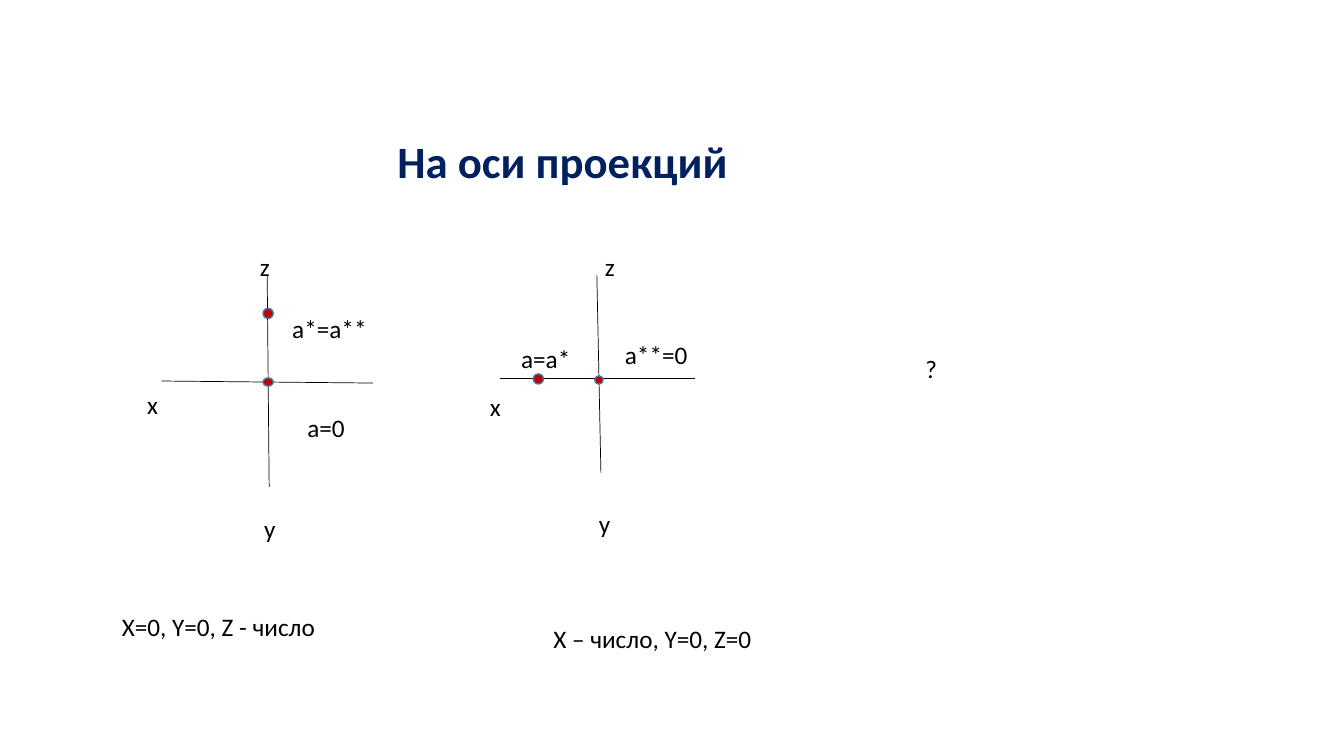
"""Builds a slide about points that lie on the projection axes."""
from pptx import Presentation, util as u
from pptx.dml.color import RGBColor
from pptx.enum import shapes, text
from pptx.oxml.ns import qn
from lxml import etree

COLORS = {"title": "002060", "ink": "000000", "point": "C00000", "rim": "43739E"}


def color(name):
    return RGBColor.from_string(COLORS[name])


def write(sp, txt, size=18, ink="ink", bold=False, wrap=True):
    tf = sp.text_frame
    tf.word_wrap = wrap
    tf.auto_size = text.MSO_AUTO_SIZE.NONE
    tf.vertical_anchor = text.MSO_ANCHOR.TOP
    p = tf.paragraphs[0]
    p.alignment = text.PP_ALIGN.LEFT
    r = p.add_run()
    r.text = txt
    r.font.name, r.font.size, r.font.bold = "Calibri", u.Pt(size), bold
    r.font.color.rgb = color(ink)


prs = Presentation()
prs.slide_width, prs.slide_height = u.Inches(13.33), u.Inches(7.5)
s = prs.slides.add_slide(prs.slide_layouts[5])

title = s.shapes.title
title.left, title.top, title.width, title.height = map(u.Inches, (3.84, 1.28, 3.52, 0.64))
write(title, "На оси проекций", size=32, ink="title", bold=True, wrap=False)

axes = [
    (2.65, 2.73, 2.67, 4.83), (1.6, 3.78, 3.7, 3.8),
    (5.92, 2.73, 5.96, 4.69), (4.96, 3.75, 6.89, 3.75),
]
for ends in axes:
    cn = s.shapes.add_connector(shapes.MSO_CONNECTOR.STRAIGHT, *map(u.Inches, ends))
    cn.line.color.rgb = color("ink")
    cn.line.width = u.Pt(0.5)
    etree.SubElement(cn._element.spPr, qn("a:effectLst"))

points = [
    (2.61, 3.06, 0.1, 0.1), (2.61, 3.75, 0.1, 0.08),
    (5.29, 3.71, 0.1, 0.1), (5.9, 3.73, 0.08, 0.08),
]
for box in points:
    sp = s.shapes.add_shape(shapes.MSO_SHAPE.FLOWCHART_CONNECTOR, *map(u.Inches, box))
    sp.shadow.inherit = False
    sp.fill.solid()
    sp.fill.fore_color.rgb = color("point")
    sp.line.color.rgb = color("rim")
    sp.line.width = u.Pt(1)

labels = [
    ("а*=а**", 2.8, 3.06, 1), ("а=0", 2.95, 4.04, 0.9),
    ("а=а*", 5.07, 3.36, 0.8), ("а**=0", 6.1, 3.32, 1),
    ("x", 1.36, 3.81, 0.35), ("x", 4.76, 3.83, 0.35),
    ("z", 2.48, 2.44, 0.35), ("z", 5.9, 2.44, 0.35),
    ("y", 2.52, 5.04, 0.35), ("y", 5.84, 4.99, 0.35),
    ("?", 9.08, 3.46, 0.35),
    ("X=0, Y=0, Z - число", 1.11, 6.02, 6.25),
    ("X – число, Y=0, Z=0", 5.39, 6.13, 2.64),
]
for txt, left, top, width in labels:
    write(s.shapes.add_textbox(*map(u.Inches, (left, top, width, 0.4))), txt)

prs.save("out.pptx")
